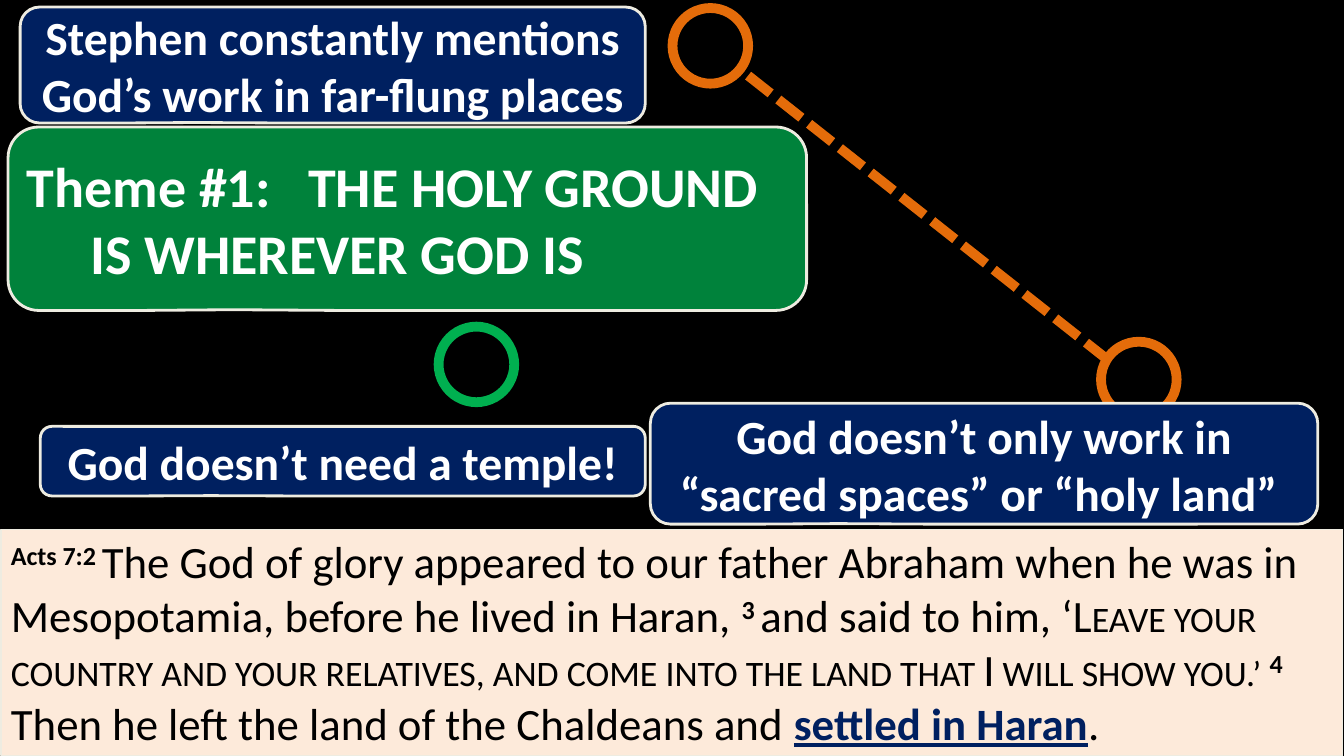
from lxml import etree
from pptx import Presentation
from pptx.dml.color import RGBColor
from pptx.enum.dml import MSO_LINE
from pptx.enum.shapes import MSO_CONNECTOR, MSO_SHAPE
from pptx.enum.text import MSO_ANCHOR, PP_ALIGN
from pptx.oxml.ns import qn
from pptx.util import Inches, Pt

RECT = MSO_SHAPE.RECTANGLE
OVAL = MSO_SHAPE.OVAL
CALLOUT = MSO_SHAPE.ROUNDED_RECTANGULAR_CALLOUT
STRAIGHT = MSO_CONNECTOR.STRAIGHT
DASH = MSO_LINE.SQUARE_DOT
TOP, MIDDLE = MSO_ANCHOR.TOP, MSO_ANCHOR.MIDDLE
LEFT, CENTER = PP_ALIGN.LEFT, PP_ALIGN.CENTER

COLORS = {
    "black": "000000", "white": "FFFFFF", "cream": "EEECE1",
    "peach": "FDEADA", "navy": "002060", "green": "00823B",
    "lime": "00B050", "orange": "E46C0A",
}
WIDTH, HEIGHT = 13.33, 7.5
COLS, ROWS = 1333, 750
RING = 75


def rgb(name):
    return RGBColor.from_string(COLORS[name])


class SlideBuilder:
    font = "Calibri"

    def __init__(self, prs):
        self.col = Inches(WIDTH) / COLS
        self.row = Inches(HEIGHT) / ROWS
        self.slide = prs.slides.add_slide(prs.slide_layouts[6])
        bg = self.slide.background.fill
        bg.solid()
        bg.fore_color.rgb = rgb("black")

    def point(self, col, row):
        return round(col * self.col), round(row * self.row)

    def shape(self, kind, box, line, width, fill=None):
        sp = self.slide.shapes.add_shape(
            kind, *self.point(*box[:2]), *self.point(*box[2:]))
        sp.shadow.inherit = False
        if fill:
            sp.fill.solid()
            sp.fill.fore_color.rgb = rgb(fill)
        else:
            sp.fill.background()
        sp.line.color.rgb = rgb(line)
        sp.line.width = Pt(width)
        return sp

    def style(self, p, size, color, bold=None, align=LEFT):
        p.alignment = align
        p.font.name = self.font
        p.font.size = Pt(size)
        p.font.color.rgb = rgb(color)
        p.font.bold = bold

    def ring(self, col, row, color):
        self.shape(OVAL, (col, row, RING, RING), color, 7)

    def dashed_line(self, start, end, color):
        cx = self.slide.shapes.add_connector(
            STRAIGHT, *self.point(*start), *self.point(*end))
        cx.line.color.rgb = rgb(color)
        cx.line.width = Pt(7)
        cx.line.dash_style = DASH
        etree.SubElement(cx._element.spPr, qn("a:effectLst"))

    def callout(self, box, text, fill="navy", size=34, align=CENTER):
        sp = self.shape(CALLOUT, box, "cream", 2, fill)
        for i, value in enumerate((-0.219, 0.496, 0.167)):
            sp.adjustments[i] = value
        tf = sp.text_frame
        tf.word_wrap = True
        tf.vertical_anchor = MIDDLE
        tf.text = text
        for p in tf.paragraphs:
            self.style(p, size, "white", True, align)
        return tf

    def theme(self, box, text, tab, indent):
        tf = self.callout(box, text, "green", 40, LEFT)
        first, second = tf.paragraphs
        pPr = first._p.get_or_add_pPr()
        tabs = pPr.makeelement(qn("a:tabLst"), {})
        etree.SubElement(tabs, qn("a:tab"), pos=str(self.point(tab, 0)[0]), algn="l")
        pPr.insert(0, tabs)
        second._p.get_or_add_pPr().set("marL", str(self.point(indent, 0)[0]))

    def scripture(self, box, parts):
        sp = self.shape(RECT, box, "cream", 0.75, "peach")
        tf = sp.text_frame
        tf.word_wrap = True
        tf.vertical_anchor = TOP
        p = tf.paragraphs[0]
        self.style(p, 32, "black")
        for text, role in parts:
            r = p.add_run()
            r.text = text
            if role == "verse":
                r.font.bold = True
                r._r.get_or_add_rPr().set("baseline", "30000")
            elif role == "small caps":
                r._r.get_or_add_rPr().set("cap", "small")
            elif role == "key":
                r.font.bold = True
                r.font.underline = True
                r.font.color.rgb = rgb("navy")


def main():
    prs = Presentation()
    prs.slide_width, prs.slide_height = Inches(WIDTH), Inches(HEIGHT)
    s = SlideBuilder(prs)
    s.scripture((1, 525, 1331, 225), [
        ("Acts 7:2 ", "verse"),
        ("The God of glory appeared to our father Abraham when he was in "
         "Mesopotamia, before he lived in Haran, ", "plain"),
        ("3 ", "verse"),
        ("and said to him, ‘", "plain"),
        ("Leave your country and your relatives, and come into the land "
         "that I will show you.’ ", "small caps"),
        ("4 ", "verse"),
        ("Then he left the land of the Chaldeans and ", "plain"),
        ("settled in Haran", "key"),
        (".", "plain"),
    ])
    s.ring(1092, 339, "orange")
    s.ring(435, 324, "lime")
    s.dashed_line((1100, 358), (742, 75), "orange")
    s.ring(667, 8, "orange")
    s.theme((8, 126, 792, 182),
            "Theme #1:\tTHE HOLY GROUND\nIS WHEREVER GOD IS", 279, 63)
    for box, text in (
        ((20, 7, 620, 115), "Stephen constantly mentions God’s work in far-flung places"),
        ((40, 423, 600, 69), "God doesn’t need a temple!"),
        ((645, 400, 662, 120), "God doesn’t only work in “sacred spaces” or “holy land” "),
    ):
        s.callout(box, text)
    prs.save("out.pptx")


if __name__ == "__main__":
    main()
